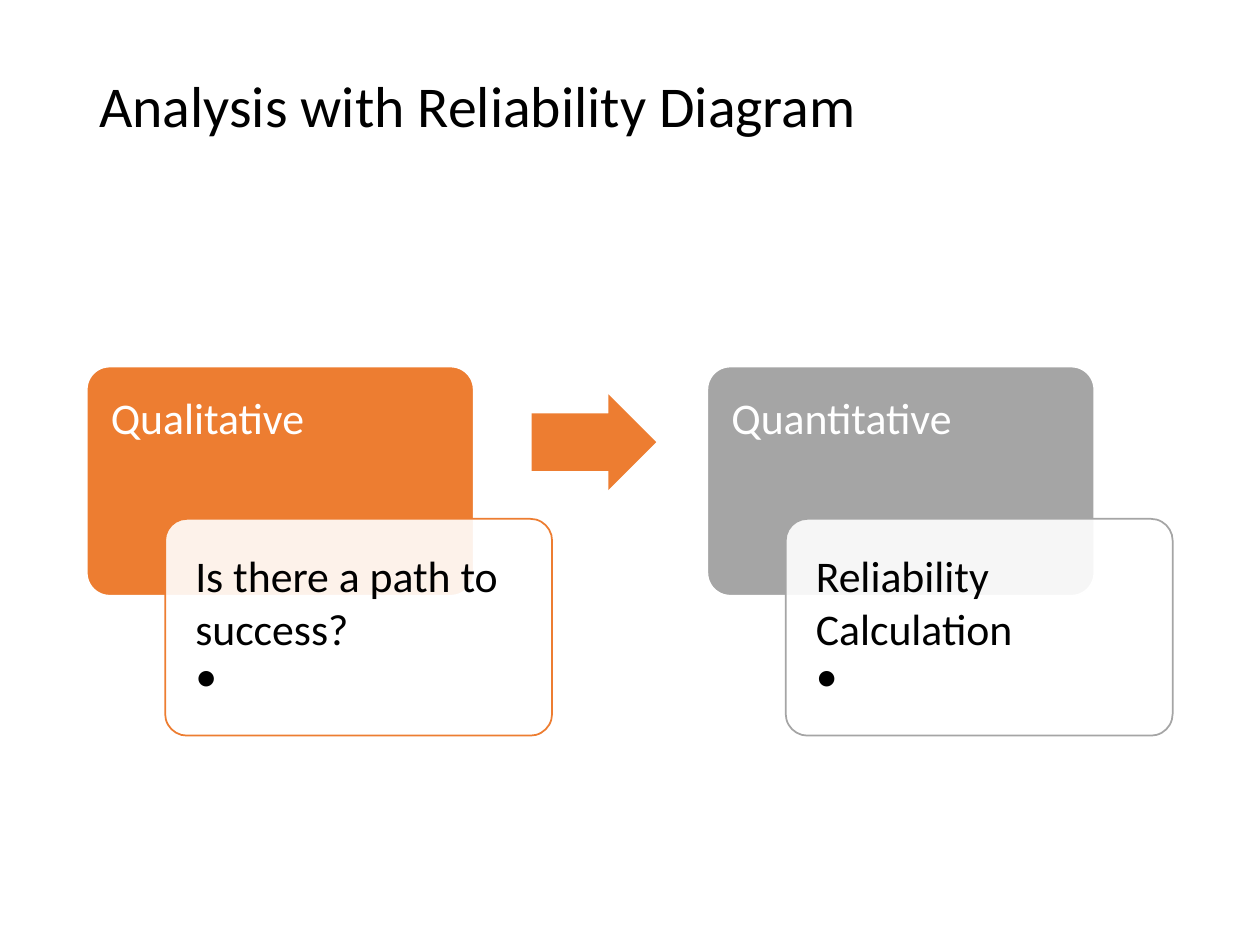
from lxml import etree
from pptx import Presentation
from pptx import util as u
from pptx.dml.color import RGBColor
from pptx.enum import shapes, text
from pptx.oxml.ns import qn

FONT, BLACK, WHITE = "Calibri", "000000", "FFFFFF"
ORANGE, GREY = "ED7D31", "A5A5A5"


def color(code):
    return RGBColor.from_string(code)


class Board:
    """Holds the style and the current slide."""

    def __init__(self, deck):
        self.slide = deck.slides.add_slide(deck.slide_layouts[5])

    def label(self, frame, lines, size, ink, pads, anchor):
        """Put (words, line spacing) pairs into a frame."""
        frame.word_wrap = True
        frame.auto_size = text.MSO_AUTO_SIZE.NONE
        frame.vertical_anchor = anchor
        (frame.margin_left, frame.margin_top,
         frame.margin_right, frame.margin_bottom) = map(u.Cm, pads)
        for i, (words, gap) in enumerate(lines):
            para = frame.add_paragraph() if i else frame.paragraphs[0]
            para.text = words
            para.alignment = text.PP_ALIGN.LEFT
            para.line_spacing = gap
            para.font.name, para.font.size = FONT, u.Pt(size)
            para.font.color.rgb = color(ink)

    def title(self, words, box):
        head = self.slide.shapes.title
        head.left, head.top, head.width, head.height = map(u.Cm, box)
        self.label(head.text_frame, [(words, 0.9)], 33, BLACK,
                   (0.25, 0.13, 0.25, 1.25), text.MSO_ANCHOR.MIDDLE)

    def shape(self, kind, box, fill, bends, edge=None, alpha=None):
        item = self.slide.shapes.add_shape(kind, *map(u.Cm, box))
        item.shadow.inherit = False
        for i, bend in enumerate(bends):
            item.adjustments[i] = bend
        item.fill.solid()
        item.fill.fore_color.rgb = color(fill)
        if alpha:
            node = item.element.spPr.find(qn("a:solidFill"))[0]
            etree.SubElement(node, qn("a:alpha"), val=str(alpha * 1000))
        if edge:
            item.line.color.rgb = color(edge)
            item.line.width = u.Pt(1)
        else:
            item.line.fill.background()
        return item

    def panel(self, box, lines, fill, edge, ink, pad, alpha=None):
        item = self.shape(shapes.MSO_SHAPE.ROUNDED_RECTANGLE, box, fill,
                          [0.1], edge, alpha)
        self.label(item.text_frame, lines, 25, ink, [pad] * 4,
                   text.MSO_ANCHOR.TOP)

    def arrow(self, box, fill):
        self.shape(shapes.MSO_SHAPE.RIGHT_ARROW, box, fill, [0.6, 0.5])


def main():
    deck = Presentation()
    deck.slide_width, deck.slide_height = u.Cm(25.4), u.Cm(19.05)
    board = Board(deck)
    left, top, wide, step = 1.75, 7.39, 7.8, 12.51

    board.title("Analysis with Reliability Diagram", (left, 0.91, 20.73, 3.68))

    # Two stages, each a coloured panel with an overlapping card
    stages = [("Qualitative", "Is there a path to success?", ORANGE),
              ("Quantitative", "Reliability Calculation", GREY)]
    for i, (name, note, tone) in enumerate(stages):
        x = left + i * step
        board.panel((x, top, wide, 4.62), [(name, 1.0)],
                    tone, WHITE, WHITE, 0.35)
        board.panel((x + 1.58, top + 3.07, wide, 4.37),
                    [(note, 1.0), ("•", 0.9)], WHITE, tone, BLACK, 0.48, 90)

    # Arrow from the first stage to the second
    board.arrow((10.72, 7.95, 2.51, 1.93), ORANGE)

    deck.save("out.pptx")


if __name__ == "__main__":
    main()
